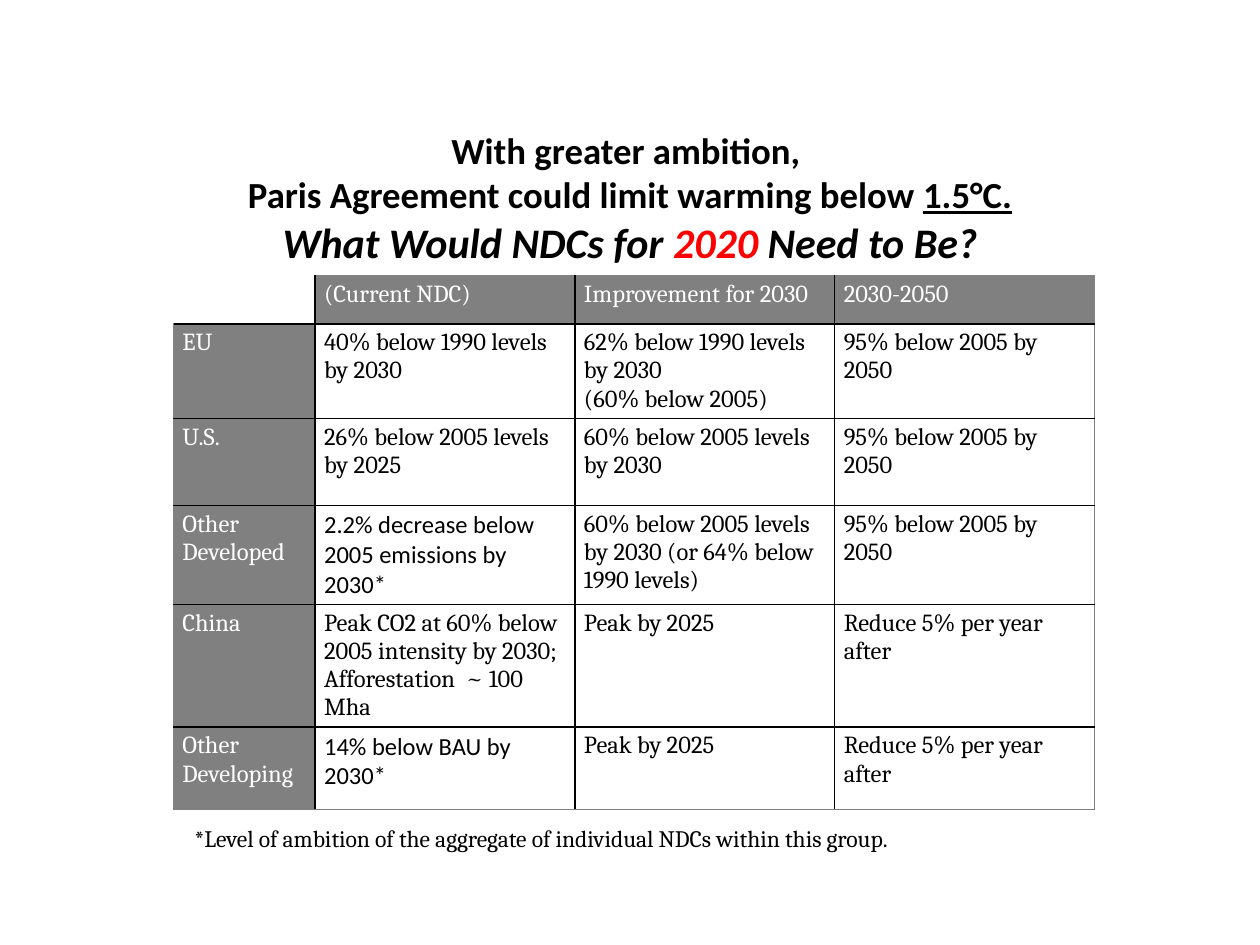
"""Build the slide on the NDCs needed to limit warming below 1.5°C."""
from lxml.etree import SubElement
from pptx import Presentation
from pptx.dml.color import RGBColor
from pptx.enum.text import MSO_ANCHOR, MSO_AUTO_SIZE, PP_ALIGN
from pptx.oxml.ns import qn
from pptx.util import Pt

BLACK = RGBColor(0, 0, 0)
WHITE = RGBColor(255, 255, 255)
GRAY = RGBColor(128, 128, 128)
RED = RGBColor(255, 0, 0)

COLUMNS = [81, 148.5, 148.5, 148.5]
HEIGHTS = [27.4, 54, 49.7, 54, 54, 46.8]
ROWS = [
    ["", "(Current NDC)", "Improvement for 2030", "2030-2050"],
    ["EU", "40% below 1990 levels by 2030",
     "62% below 1990 levels by 2030\n(60% below 2005)", "95% below 2005 by 2050"],
    ["U.S.", "26% below 2005 levels by 2025", "60% below 2005 levels by 2030",
     "95% below 2005 by 2050"],
    ["Other Developed", "2.2% decrease below 2005 emissions by 2030*",
     "60% below 2005 levels by 2030 (or 64% below 1990 levels)", "95% below 2005 by 2050"],
    ["China", "Peak CO2 at 60% below 2005 intensity by 2030;\nAfforestation  ~ 100 Mha",
     "Peak by 2025", "Reduce 5% per year after"],
    ["Other Developing", "14% below BAU by 2030*", "Peak by 2025", "Reduce 5% per year after"],
]
TITLE = [
    [("With greater ambition, ", {})],
    [("Paris Agreement could limit warming below ", {}), ("1.5°C.", {"underline": True})],
    [("What Would NDCs for ", {"size": Pt(24), "italic": True}),
     ("2020", {"size": Pt(24), "italic": True, "color": RED}),
     (" Need to Be?", {"size": Pt(24), "italic": True})],
]


class SlideBuilder:
    """Hold the style and the current slide."""

    def __init__(self, prs):
        self.s = prs.slides.add_slide(prs.slide_layouts[5])
        self.heading_font, self.body_font = "Calibri", "Cambria"

    def style(self, font, name, size, color):
        font.name, font.size = name, Pt(size)
        font.color.rgb = color

    def insets(self, box):
        box.margin_left = box.margin_right = Pt(5.2)
        box.margin_top = box.margin_bottom = Pt(2.8)

    def title(self, lines, left, top, width, height):
        sp = self.s.shapes.title
        sp.left, sp.top, sp.width, sp.height = Pt(left), Pt(top), Pt(width), Pt(height)
        tf = sp.text_frame
        tf.word_wrap, tf.auto_size = True, MSO_AUTO_SIZE.NONE
        tf.vertical_anchor = MSO_ANCHOR.MIDDLE
        self.insets(tf)
        p = tf.paragraphs[0]
        p.alignment = PP_ALIGN.CENTER
        for i, line in enumerate(lines):
            if i:
                p.add_line_break()
            for text, look in line:
                r = p.add_run()
                r.text = text
                self.style(r.font, self.heading_font, 21, look.get("color", BLACK))
                r.font.bold = True
                r.font.size = look.get("size", Pt(21))
                r.font.italic = look.get("italic")
                r.font.underline = look.get("underline")

    def note(self, text, left, top, width, height):
        tf = self.s.shapes.add_textbox(Pt(left), Pt(top), Pt(width), Pt(height)).text_frame
        tf.word_wrap, tf.auto_size = True, MSO_AUTO_SIZE.SHAPE_TO_FIT_TEXT
        p = tf.paragraphs[0]
        p.text = text
        self.style(p.font, self.body_font, 13.5, BLACK)

    def border(self, cell, side, color, width):
        tc_pr = cell._tc.get_or_add_tcPr()
        ln = SubElement(tc_pr, qn(f"a:ln{side}"), w=str(Pt(width)))
        if color is None:
            SubElement(ln, qn("a:noFill"))
        else:
            fill = SubElement(ln, qn("a:solidFill"))
            SubElement(fill, qn("a:srgbClr"), val=str(color))

    def cell(self, cell, text, row, col):
        corner, header = row == col == 0, row == 0 or col == 0
        self.insets(cell)
        outer = {"L": col == 0, "R": col == len(COLUMNS) - 1,
                 "T": row == 0, "B": row == len(ROWS) - 1}
        for side, is_outer in outer.items():
            color = None if corner else GRAY
            self.border(cell, side, color if is_outer else BLACK, 0.25 if is_outer else 1)
        if header and not corner:
            cell.fill.solid()
            cell.fill.fore_color.rgb = GRAY
        else:
            cell.fill.background()
        if corner:
            return
        cell.text = text
        name = self.heading_font if text.endswith("*") else self.body_font
        for p in cell.text_frame.paragraphs:
            self.style(p.font, name, 14, WHITE if header else BLACK)

    def table(self, rows, left, top):
        table = self.s.shapes.add_table(len(rows), len(COLUMNS), Pt(left), Pt(top),
                                        Pt(sum(COLUMNS)), Pt(sum(HEIGHTS))).table
        table.first_row = table.horz_banding = False
        for column, width in zip(table.columns, COLUMNS):
            column.width = Pt(width)
        for i, texts in enumerate(rows):
            table.rows[i].height = Pt(HEIGHTS[i])
            for j, text in enumerate(texts):
                self.cell(table.cell(i, j), text, i, j)


def main():
    prs = Presentation()
    prs.slide_width, prs.slide_height = Pt(720), Pt(540)
    slide = SlideBuilder(prs)
    slide.table(ROWS, 99, 157.5)
    slide.note("*Level of ambition of the aggregate of individual NDCs within this group.",
               104, 467.5, 500, 23.5)
    slide.title(TITLE, 117, 81.5, 486, 62.5)
    prs.save("out.pptx")


if __name__ == "__main__":
    main()
